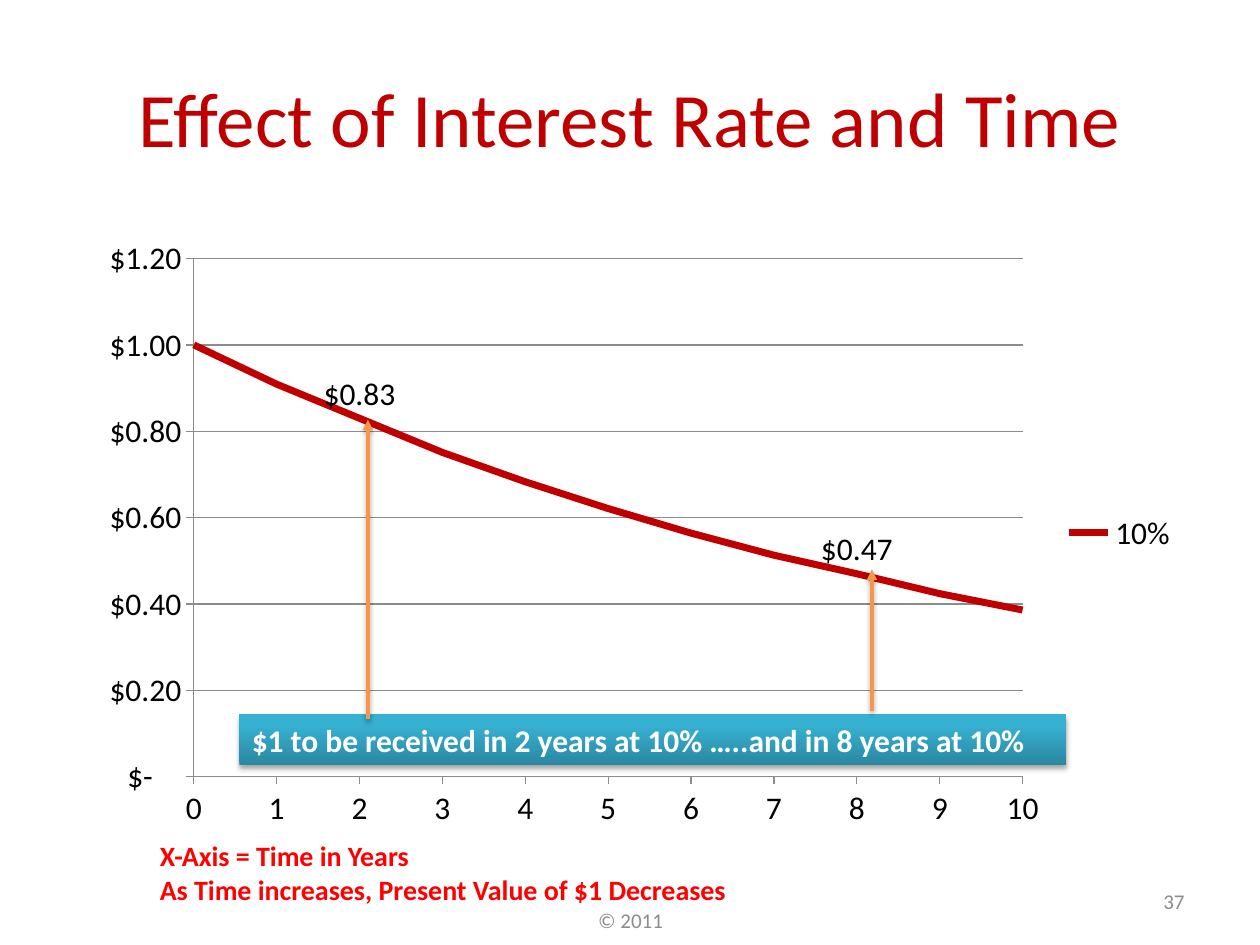
from lxml import etree
from pptx import Presentation
from pptx.chart.data import XyChartData
from pptx.dml.color import RGBColor
from pptx.enum.chart import XL_CHART_TYPE, XL_LABEL_POSITION, XL_LEGEND_POSITION, XL_TICK_MARK
from pptx.enum.shapes import MSO_CONNECTOR, MSO_SHAPE
from pptx.enum.text import MSO_ANCHOR, PP_ALIGN
from pptx.oxml import parse_xml
from pptx.oxml.ns import nsdecls, qn
from pptx.util import Inches, Pt

LEFT, CENTER, RIGHT = PP_ALIGN.LEFT, PP_ALIGN.CENTER, PP_ALIGN.RIGHT
TOP, MIDDLE = MSO_ANCHOR.TOP, MSO_ANCHOR.MIDDLE
OUTSIDE = XL_TICK_MARK.OUTSIDE
FONT = "Calibri"
DARK_RED = RGBColor(0xC0, 0x00, 0x00)
RED = RGBColor(0xFF, 0x00, 0x00)
BLACK = RGBColor(0x00, 0x00, 0x00)
WHITE = RGBColor(0xFF, 0xFF, 0xFF)
GRAY = RGBColor(0x8C, 0x8C, 0x8C)
ORANGE = RGBColor(0xF7, 0x96, 0x46)
DEEP_TEAL = RGBColor(0x2A, 0x88, 0xA2)
TEAL = RGBColor(0x37, 0xB1, 0xD2)

# Content
TITLE = "Effect of Interest Rate and Time"
RATE = 0.10
YEARS = range(11)
LABELLED_YEARS = (2, 8)
MONEY = '"$"#,##0.00;;"$-    "'
BANNER = "$1 to be received in 2 years at 10% …..and in 8 years at 10%"
# text, (left, top, width, height), size, colour, bold, alignment, anchor, wrap
TEXTS = [
    ("X-Axis = Time in Years\nAs Time increases, Present Value of $1 Decreases",
     (1.17, 6.61, 4.75, 0.64), 16, RED, True, LEFT, TOP, False),
    ("© 2011", (3.42, 7.1, 3.17, 0.4), 12, GRAY, False, CENTER, MIDDLE, True),
    ("37", (7.17, 6.95, 2.33, 0.4), 12, GRAY, False, RIGHT, MIDDLE, True),
]
ARROWS = [(2.92, 5.71, 3.33), (6.92, 5.64, 4.52)]  # x, start y, end y
PLOT_AREA = {"x": 0.11, "y": 0.05, "w": 0.74, "h": 0.85}  # shares of the chart


def style_font(font, size, color, bold=False):
    font.name, font.size, font.bold = FONT, Pt(size), bold
    font.color.rgb = color


def write(shape, text, size, color, bold, align, anchor, wrap):
    frame = shape.text_frame
    frame.text = text
    frame.word_wrap, frame.vertical_anchor = wrap, anchor
    for para in frame.paragraphs:
        para.alignment = align
        for span in para.runs:
            style_font(span.font, size, color, bold)


def add_shadow(shape, opacity, distance):
    shape._element.spPr.append(parse_xml(
        f'<a:effectLst {nsdecls("a")}><a:outerShdw blurRad="{Pt(3.1)}" dist="{Pt(distance)}" '
        f'dir="5400000" rotWithShape="0"><a:srgbClr val="000000">'
        f'<a:alpha val="{opacity * 1000}"/></a:srgbClr></a:outerShdw></a:effectLst>'))


def add_value_chart(page):
    data = XyChartData(number_format=MONEY)
    curve_data = data.add_series(f"{RATE:.0%}")
    for year in YEARS:
        curve_data.add_data_point(year, round((1 + RATE) ** -year, 2 if year in LABELLED_YEARS else 3))
    chart = page.shapes.add_chart(
        XL_CHART_TYPE.XY_SCATTER_SMOOTH_NO_MARKERS,
        Inches(0.56), Inches(1.81), Inches(8.89), Inches(4.84), data).chart
    style_font(chart.font, 18, BLACK)
    chart.has_title = False
    chart.has_legend = True
    chart.legend.position = XL_LEGEND_POSITION.RIGHT
    chart.legend.include_in_layout = False

    # Axes
    scales = [(chart.category_axis, 10, 1, "General"), (chart.value_axis, 1.2, 0.2, MONEY)]
    for axis, maximum, step, number_format in scales:
        axis.minimum_scale, axis.maximum_scale, axis.major_unit = 0, maximum, step
        axis.major_tick_mark = OUTSIDE
        axis.tick_labels.number_format = number_format
        axis.tick_labels.number_format_is_linked = False
        axis.format.line.color.rgb = GRAY
    chart.category_axis.has_major_gridlines = False
    chart.value_axis.has_major_gridlines = True
    chart.value_axis.major_gridlines.format.line.color.rgb = GRAY

    # Curve and its labelled points
    curve = chart.plots[0].series[0]
    curve.format.line.color.rgb = DARK_RED
    curve.format.line.width = Pt(4)
    for year in LABELLED_YEARS:
        curve.points[year].data_label.position = XL_LABEL_POSITION.ABOVE
    for flag in curve._element.xpath("c:dLbls/c:showVal"):
        flag.set("val", "0")

    # Fixed plot area
    plot_area = chart._chartSpace.chart.plotArea
    for old in plot_area.findall(qn("c:layout")):
        plot_area.remove(old)
    layout = parse_xml(f'<c:layout {nsdecls("c")}><c:manualLayout/></c:layout>')
    settings = {"layoutTarget": "inner", "xMode": "edge", "yMode": "edge", **PLOT_AREA}
    for name, value in settings.items():
        etree.SubElement(layout[0], qn(f"c:{name}")).set("val", str(value))
    plot_area.insert(0, layout)


def add_banner(page):
    banner = page.shapes.add_shape(
        MSO_SHAPE.RECTANGLE, Inches(1.9), Inches(5.67), Inches(6.56), Inches(0.4))
    banner.fill.gradient()
    banner.fill.gradient_angle = 90
    for stop, color, position in zip(banner.fill.gradient_stops, (DEEP_TEAL, TEAL), (0, 0.8)):
        stop.color.rgb, stop.position = color, position
    banner.line.fill.background()
    add_shadow(banner, 35, 1.8)
    write(banner, BANNER, 18, WHITE, True, LEFT, TOP, False)


def add_arrow(page, x, start, end):
    arrow = page.shapes.add_connector(
        MSO_CONNECTOR.STRAIGHT, Inches(x), Inches(start), Inches(x), Inches(end))
    arrow.line.color.rgb = ORANGE
    arrow.line.width = Pt(2)
    etree.SubElement(arrow.line._get_or_add_ln(), qn("a:tailEnd")).set("type", "triangle")
    add_shadow(arrow, 38, 1.6)


def main():
    deck = Presentation()
    deck.slide_width, deck.slide_height = Inches(10), Inches(7.5)
    page = deck.slides.add_slide(deck.slide_layouts[5])

    title = page.shapes.title
    title.left, title.top, title.width, title.height = map(Inches, (0.5, 0.3, 9, 1.25))
    write(title, TITLE, 44, DARK_RED, False, CENTER, MIDDLE, True)

    add_value_chart(page)
    add_banner(page)
    for arrow in ARROWS:
        add_arrow(page, *arrow)
    for text, place, *style in TEXTS:
        write(page.shapes.add_textbox(*map(Inches, place)), text, *style)

    deck.save("out.pptx")


if __name__ == "__main__":
    main()
